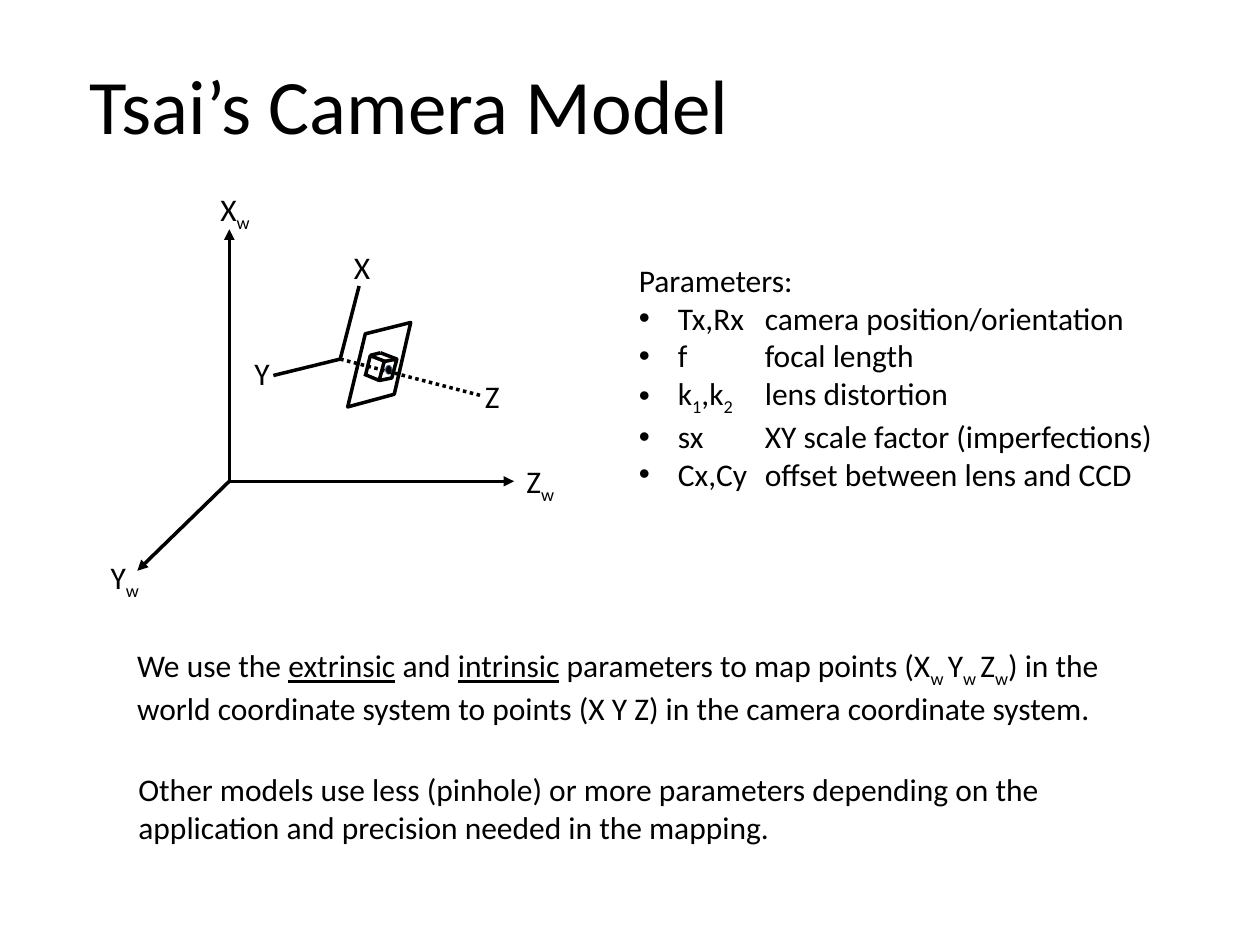
import pptx
import pptx.util
import pptx.dml.color
import pptx.enum.dml
import pptx.enum.shapes
import pptx.enum.text
import pptx.oxml
import pptx.oxml.ns

Inches, Pt = pptx.util.Inches, pptx.util.Pt
Align = pptx.enum.text.PP_ALIGN
Anchor = pptx.enum.text.MSO_ANCHOR
Fit = pptx.enum.text.MSO_AUTO_SIZE
Dash = pptx.enum.dml.MSO_LINE
Kind = pptx.enum.shapes

THEME = {
    "font": "Calibri", "title": 44, "text": 18, "line": 2, "thin": 0.5,
    "ink": "000000", "paper": "FFFFFF", "rim": "3A5F8C",
}

# In text, "|" parts runs; a run led by "_" is subscript, by "*" underlined.
TITLE = ("Tsai’s Camera Model", (0.61, 0.4, 5.33, 0.84))
PARAMS = [
    "Parameters:",
    "Tx,Rx\tcamera position/orientation",
    "f\tfocal length",
    "k|_1|,k|_2|\tlens distortion",
    "sx\tXY scale factor (imperfections)",
    "Cx,Cy\toffset between lens and CCD",
]
PARAM_BOX = (4.97, 2.02, 4.32, 1.92)
INDENT, TAB = 0.31, 1

NOTES = [
    ("We use the |*extrinsic| and |*intrinsic| parameters to map points "
     "(X|_w |Y|_w |Z|_w|) in the world coordinate system to points (X Y Z) "
     "in the camera coordinate system.", (0.99, 5.08, 8.25, 0.71)),
    ("Other models use less (pinhole) or more parameters depending on the "
     "application and precision needed in the mapping.", (1, 6.06, 7.95, 0.71)),
]
LABELS = [
    ("X|_w", (1.65, 1.46, 0.45, 0.4)),
    ("Y|_w", (0.78, 4.38, 0.44, 0.4)),
    ("Z|_w", (4.08, 3.62, 0.44, 0.4)),
    ("X", (2.71, 1.92, 0.33, 0.4)),
    ("Y", (1.92, 2.76, 0.32, 0.4)),
    ("Z", (3.75, 2.94, 0.32, 0.4)),
]

WORLD = (1.82, 3.82)
WORLD_ENDS = [(1.82, 1.82), (1.09, 4.53), (4.08, 3.82)]
CAMERA = (2.7, 2.85)
CAMERA_ENDS = [(2.17, 2.98), (2.85, 2.27)]
SIGHT_END = (3.82, 3.14)
PLANE = [(3.26, 2.56), (3.13, 3.13), (2.76, 3.23), (2.9, 2.65)]
FRONT = [(3.15, 2.85), (3.11, 3), (3.01, 3.02), (3.05, 2.87)]
EDGES = [
    ((3.02, 2.8), (2.94, 2.82)),
    ((3.01, 3.02), (2.89, 2.97)),
    ((2.94, 2.82), (2.9, 2.98)),
    ((3.06, 2.87), (2.93, 2.82)),
    ((3.15, 2.85), (3.02, 2.8)),
]
LENS = (3.06, 2.9, 0.05, 0.07)


def put(obj, form):
    for key, val in form.items():
        setattr(obj, key, val)


def tint(name):
    return pptx.dml.color.RGBColor.from_string(THEME[name])


def add_xml(node, tag, **attrs):
    item = pptx.oxml.ns.qn(tag)
    child = node.makeelement(item, attrs)
    node.append(child)
    return child


def place(shape, box):
    put(shape, dict(zip(("left", "top", "width", "height"), map(Inches, box))))


def write(para, text, size="text"):
    para.alignment = Align.LEFT
    for part in text.split("|"):
        run = para.add_run()
        run.text = part.lstrip("_*")
        put(run.font, {"name": THEME["font"], "size": Pt(THEME[size])})
        run.font.color.rgb = tint("ink")
        if part.startswith("_"):
            run.font._element.set("baseline", "-25000")
        if part.startswith("*"):
            run.font.underline = True


def add_text(slide, text, box, wrap):
    shape = slide.shapes.add_textbox(*map(Inches, box))
    shape.text_frame.word_wrap = wrap
    write(shape.text_frame.paragraphs[0], text)


def add_line(slide, start, end, arrow=False, dash=None):
    ends = map(Inches, start + end)
    shape = slide.shapes.add_connector(Kind.MSO_CONNECTOR.STRAIGHT, *ends)
    put(shape.line, {"width": Pt(THEME["line"]), "dash_style": dash})
    shape.line.color.rgb = tint("ink")
    if arrow:
        add_xml(shape.line._get_or_add_ln(), "a:tailEnd", type="triangle")
    add_xml(shape._element.spPr, "a:effectLst")


def paint(shape, fill, line, width):
    shape.shadow.inherit = False
    shape.fill.solid()
    shape.fill.fore_color.rgb = tint(fill)
    shape.line.color.rgb = tint(line)
    shape.line.width = Pt(THEME[width])


def add_face(slide, points):
    spots = [tuple(map(Inches, spot)) for spot in points]
    pen = slide.shapes.build_freeform(*spots[0])
    pen.add_line_segments(spots[1:], close=True)
    paint(pen.convert_to_shape(), "paper", "ink", "line")


def fill_title(slide):
    text, box = TITLE
    place(slide.shapes.title, box)
    frame = slide.shapes.title.text_frame
    put(frame, {"word_wrap": False, "auto_size": Fit.NONE,
                "vertical_anchor": Anchor.MIDDLE})
    write(frame.paragraphs[0], text, "title")


def fill_params(slide):
    body = slide.placeholders[1]
    place(body, PARAM_BOX)
    frame = body.text_frame
    put(frame, {"word_wrap": True, "auto_size": Fit.NONE,
                "vertical_anchor": Anchor.TOP})
    for num, text in enumerate(PARAMS):
        para = frame.add_paragraph() if num else frame.paragraphs[0]
        write(para, text)
        para.space_before = Pt(0)
        props = para._p.get_or_add_pPr()
        dent = Inches(INDENT) if num else 0
        props.set("marL", str(dent))
        props.set("indent", str(-dent))
        if num:
            add_xml(props, "a:buChar", char="•")
            tabs = add_xml(props, "a:tabLst")
            add_xml(tabs, "a:tab", pos=str(Inches(TAB)), algn="l")
        else:
            add_xml(props, "a:buNone")


def draw_model(slide):
    add_face(slide, PLANE)
    for end in WORLD_ENDS:
        add_line(slide, WORLD, end, arrow=True)
    add_face(slide, FRONT)
    for start, end in EDGES:
        add_line(slide, start, end)
    lens = slide.shapes.add_shape(Kind.MSO_SHAPE.OVAL, *map(Inches, LENS))
    paint(lens, "ink", "rim", "thin")
    add_line(slide, CAMERA, SIGHT_END, dash=Dash.ROUND_DOT)
    for end in CAMERA_ENDS:
        add_line(slide, CAMERA, end)


def main():
    deck = pptx.Presentation()
    put(deck, {"slide_width": Inches(10), "slide_height": Inches(7.5)})
    slide = deck.slides.add_slide(deck.slide_layouts[1])
    fill_title(slide)
    fill_params(slide)
    draw_model(slide)
    for text, box in LABELS:
        add_text(slide, text, box, False)
    for text, box in NOTES:
        add_text(slide, text, box, True)
    deck.save("out.pptx")


if __name__ == "__main__":
    main()
